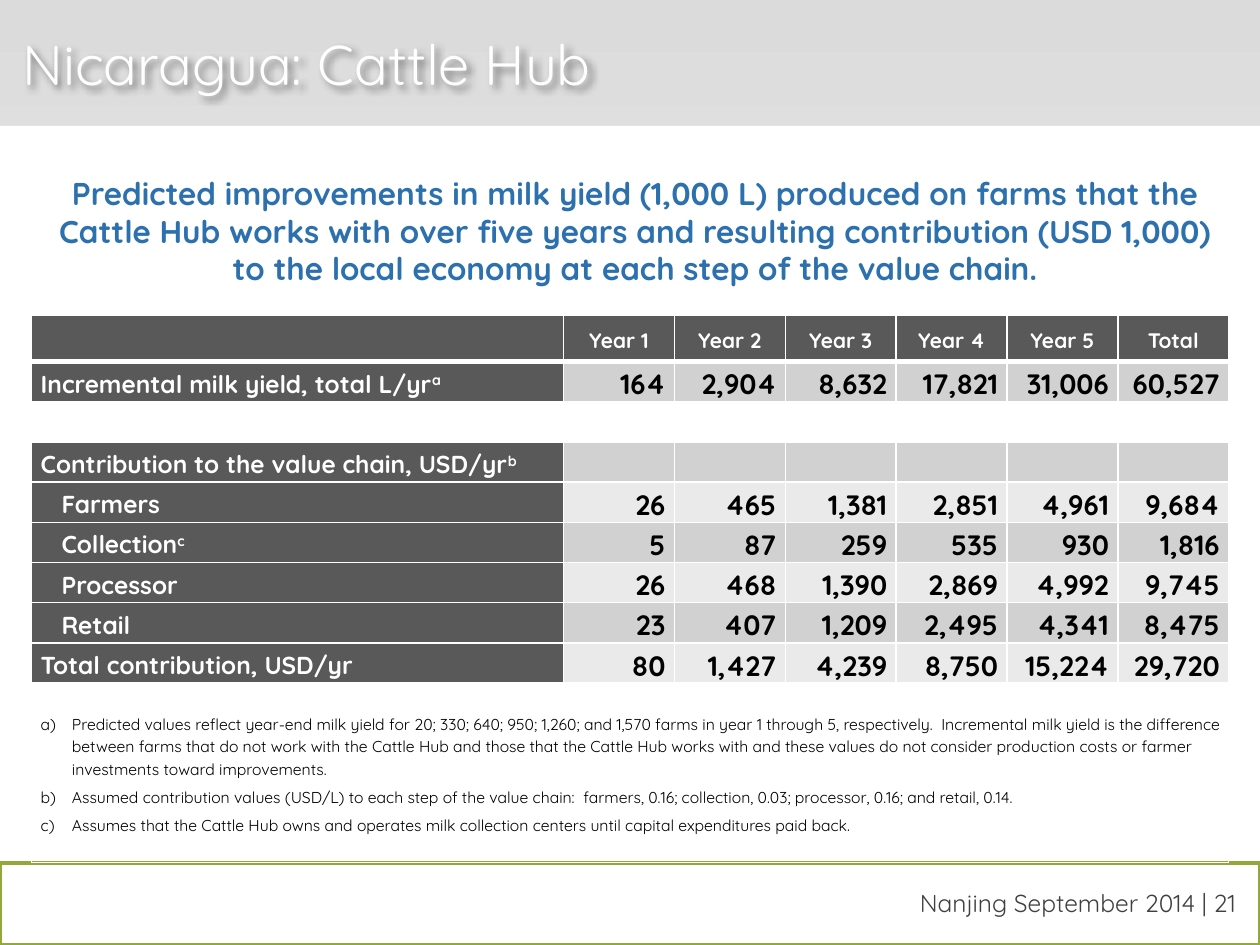
"""Build the Nicaragua Cattle Hub slide with its milk yield and contribution table."""
from lxml.etree import SubElement
from pptx import Presentation
from pptx.dml.color import RGBColor
from pptx.enum.shapes import MSO_SHAPE
from pptx.enum.text import MSO_ANCHOR, PP_ALIGN
from pptx.oxml import parse_xml
from pptx.oxml.ns import nsdecls, qn
from pptx.util import Cm, Pt

TITLE = "Nicaragua: Cattle Hub"
HEADING = (
    "Predicted improvements in milk yield (1,000 L) produced on farms that the "
    "Cattle Hub works with over five years and resulting contribution (USD 1,000)\n"
    "to the local economy at each step of the value chain."
)
FOOTER = "Nanjing September 2014 | 21"
COLUMNS = ["Year 1", "Year 2", "Year 3", "Year 4", "Year 5", "Total"]
NO_VALUES = [""] * len(COLUMNS)
ROWS = [
    ("Incremental milk yield, total L/yr", "a", 0, ["164", "2,904", "8,632", "17,821", "31,006", "60,527"]),
    None,
    ("Contribution to the value chain, USD/yr", "b", 0, NO_VALUES),
    ("Farmers", "", 1, ["26", "465", "1,381", "2,851", "4,961", "9,684"]),
    ("Collection", "c", 1, ["5", "87", "259", "535", "930", "1,816"]),
    ("Processor", "", 1, ["26", "468", "1,390", "2,869", "4,992", "9,745"]),
    ("Retail", "", 1, ["23", "407", "1,209", "2,495", "4,341", "8,475"]),
    ("Total contribution, USD/yr", "", 0, ["80", "1,427", "4,239", "8,750", "15,224", "29,720"]),
]
FOOTNOTES = [
    "Predicted values reflect year-end milk yield for 20; 330; 640; 950; 1,260; and 1,570 farms in year 1 "
    "through 5, respectively.  Incremental milk yield is the difference between farms that do not work with "
    "the Cattle Hub and those that the Cattle Hub works with and these values do not consider production "
    "costs or farmer investments toward improvements.",
    "Assumed contribution values (USD/L) to each step of the value chain:  farmers, 0.16; collection, 0.03; "
    "processor, 0.16; and retail, 0.14.",
    "Assumes that the Cattle Hub owns and operates milk collection centers until capital expenditures paid back.",
]

FONT = "Quicksand"
WHITE = RGBColor(0xFF, 0xFF, 0xFF)
BLACK = RGBColor(0, 0, 0)
OFF_WHITE = RGBColor(0xFE, 0xFE, 0xFE)
BACKDROP_GREY = RGBColor(0xDB, 0xDB, 0xDB)
HEADER_GREY = RGBColor(0x59, 0x59, 0x59)
BANDS = [RGBColor(0xD1, 0xD1, 0xD1), RGBColor(0xEA, 0xEA, 0xEA)]
FOOTER_GREY = RGBColor(0x40, 0x40, 0x40)
GREEN = RGBColor(0x91, 0xA9, 0x39)
BLUE = RGBColor(0x2C, 0x70, 0xAE)

TABLE_WIDTH, LABEL_WIDTH = 24.13, 10.72
HEADER_HEIGHT, ROW_HEIGHT, NOTES_HEIGHT = 0.94, 0.81, 3.62
CELL_INSET, INDENT = 0.18, 0.42


def write(paragraph, text, size, color, bold=False, align=PP_ALIGN.LEFT, spacing=None, raised=""):
    paragraph.alignment = align
    paragraph.line_spacing = spacing
    for number, line in enumerate(text.split("\n")):
        if number:
            paragraph.add_line_break()
        for part in filter(None, (line, raised)):
            run = paragraph.add_run()
            run.text = part
            run.font.name, run.font.size, run.font.bold = FONT, Pt(size), bold
            run.font.color.rgb = color
            if part is raised:
                run.font._element.set("baseline", "30000")


def add_band(slide, top, height, outline=None):
    band = slide.shapes.add_shape(MSO_SHAPE.RECTANGLE, 0, Cm(top), Cm(25.4), Cm(height))
    band.shadow.inherit = False
    band.fill.solid()
    band.fill.fore_color.rgb = WHITE
    if outline is None:
        band.line.fill.background()
    else:
        band.line.color.rgb = outline
        band.line.width = Pt(2.25)


def add_caption(slide, text, left, top, width, height, anchor=MSO_ANCHOR.TOP, **style):
    caption = slide.shapes.add_textbox(Cm(left), Cm(top), Cm(width), Cm(height))
    caption.text_frame.word_wrap = True
    caption.text_frame.vertical_anchor = anchor
    write(caption.text_frame.paragraphs[0], text, **style)
    return caption


def add_text_shadow(caption):
    caption._element.spPr.append(parse_xml(
        f'<a:effectLst {nsdecls("a")}><a:outerShdw blurRad="50800" dist="38100" dir="2700000">'
        '<a:srgbClr val="000000"><a:alpha val="45000"/></a:srgbClr></a:outerShdw></a:effectLst>'
    ))


def format_cell(cell, fill=None, bottom=1, sides="LRTB"):
    cell.margin_left = cell.margin_right = Cm(CELL_INSET)
    cell.margin_top = cell.margin_bottom = 0
    cell.vertical_anchor = MSO_ANCHOR.MIDDLE
    properties = cell._tc.get_or_add_tcPr()
    for side in sides:
        border = SubElement(properties, qn(f"a:ln{side}"), w=str(Pt(bottom if side == "B" else 1)))
        SubElement(SubElement(border, qn("a:solidFill")), qn("a:srgbClr"), val=str(WHITE))
    if fill is None:
        cell.fill.background()
    else:
        cell.fill.solid()
        cell.fill.fore_color.rgb = fill


def fill_row(cells, label, raised, level, values):
    format_cell(cells[0], HEADER_GREY)
    cells[0].margin_left = Cm(CELL_INSET + level * INDENT)
    write(cells[0].text_frame.paragraphs[0], label, 14, WHITE, bold=True, spacing=1.15, raised=raised)
    for cell, value in zip(cells[1:], values):
        write(cell.text_frame.paragraphs[0], value, 16, BLACK, bold=True, align=PP_ALIGN.RIGHT, spacing=1.15)


def add_footnotes(cell):
    cell.vertical_anchor = MSO_ANCHOR.TOP
    cell.margin_top = Cm(0.57)
    for number, note in enumerate(FOOTNOTES):
        paragraph = cell.text_frame.add_paragraph() if number else cell.text_frame.paragraphs[0]
        properties = paragraph._p.get_or_add_pPr()
        properties.set("marL", str(Cm(0.63)))
        properties.set("indent", str(-Cm(0.63)))
        SubElement(properties, qn("a:buFont"), typeface=FONT)
        SubElement(properties, qn("a:buAutoNum"), type="alphaLcParenR")
        paragraph.space_after = Pt(3 if note is not FOOTNOTES[-1] else 0)
        write(paragraph, note, 9, BLACK, spacing=1.15)


def add_yield_table(slide):
    heights = [HEADER_HEIGHT] + [ROW_HEIGHT] * len(ROWS) + [NOTES_HEIGHT]
    table = slide.shapes.add_table(
        len(heights), len(COLUMNS) + 1, Cm(0.64), Cm(6.35), Cm(TABLE_WIDTH), Cm(sum(heights))
    ).table
    table.first_row = table.horz_banding = False
    year_width = (TABLE_WIDTH - LABEL_WIDTH) / len(COLUMNS)
    for column, width in zip(table.columns, [LABEL_WIDTH] + [year_width] * len(COLUMNS)):
        column.width = Cm(width)
    for row, height in zip(table.rows, heights):
        row.height = Cm(height)

    header, *body, notes = [list(row.cells) for row in table.rows]
    for cell, name in zip(header, [""] + COLUMNS):
        format_cell(cell, HEADER_GREY, bottom=3)
        write(cell.text_frame.paragraphs[0], name, 12, WHITE, bold=True, align=PP_ALIGN.CENTER, spacing=1.15)
    for number, (cells, content) in enumerate(zip(body, ROWS)):
        for cell in cells[1 if content else 0:]:
            format_cell(cell, BANDS[number % 2] if content else None)
        if content:
            fill_row(cells, *content)
    notes[0].merge(notes[-1])
    for cell in notes:
        format_cell(cell, sides="LRT")
    add_footnotes(notes[0])


def main():
    deck = Presentation()
    deck.slide_width, deck.slide_height = Cm(25.4), Cm(19.05)
    slide = deck.slides.add_slide(deck.slide_layouts[6])
    backdrop = slide.background.fill
    backdrop.gradient()
    backdrop.gradient_angle = 270
    for stop, color in zip(backdrop.gradient_stops, (BACKDROP_GREY, WHITE)):
        stop.color.rgb = color

    add_band(slide, 2.54, 16.51)
    add_band(slide, 17.4, 1.65, outline=GREEN)
    add_caption(slide, FOOTER, 15.01, 17.78, 10.16, 0.86, size=14, color=FOOTER_GREY, align=PP_ALIGN.RIGHT)
    title = add_caption(slide, TITLE, 0.2, 0, 24.77, 2.54, anchor=MSO_ANCHOR.MIDDLE, size=32, color=OFF_WHITE)
    add_text_shadow(title)
    add_yield_table(slide)
    add_caption(slide, HEADING, 0.64, 3.38, 24.33, 2.57, size=18, color=BLUE, bold=True, align=PP_ALIGN.CENTER)
    deck.save("out.pptx")


if __name__ == "__main__":
    main()
